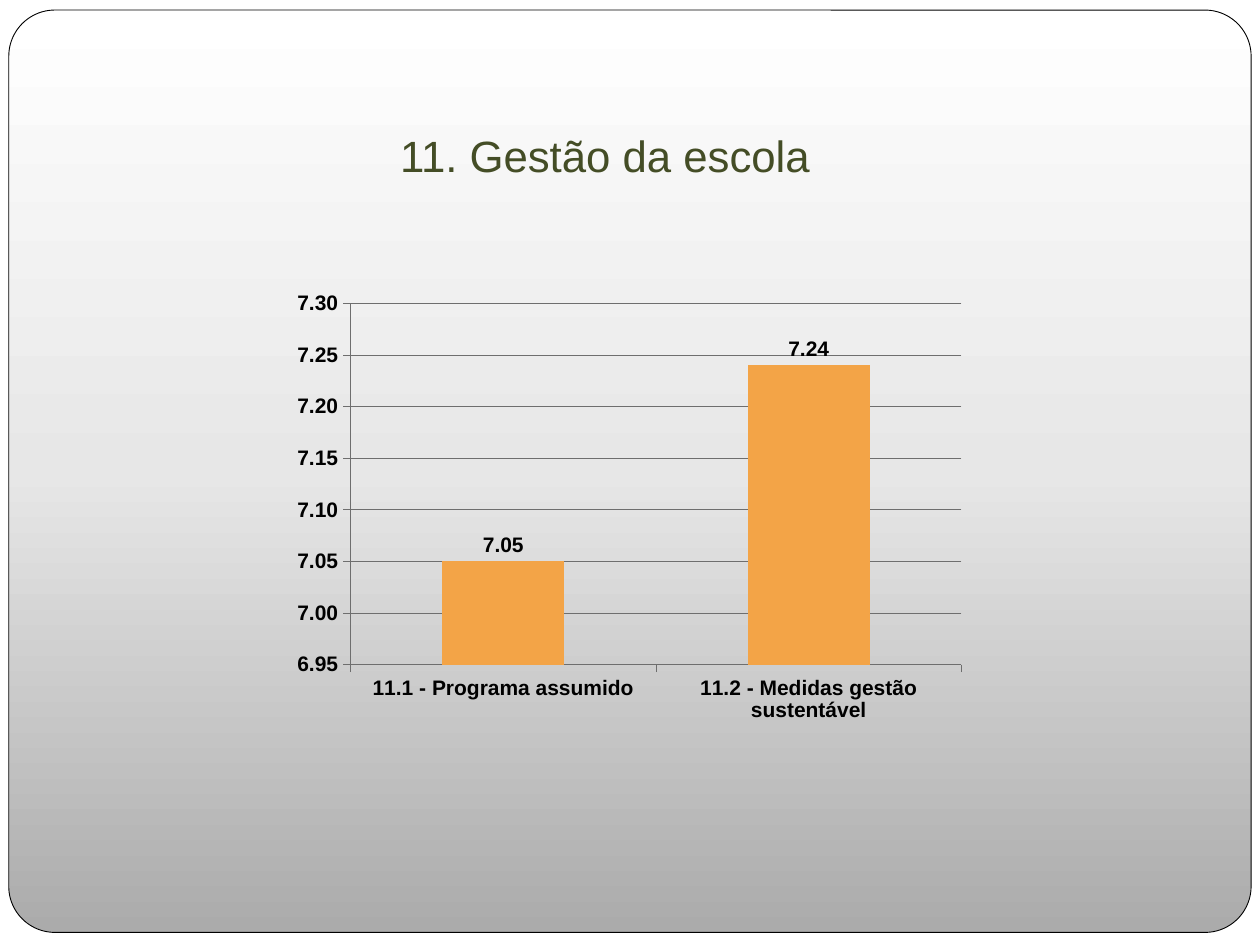
from copy import deepcopy
from dataclasses import dataclass

from pptx import Presentation
from pptx.chart.data import CategoryChartData
from pptx.dml.color import RGBColor
from pptx.enum.chart import XL_CHART_TYPE as ChartType
from pptx.enum.chart import XL_LABEL_POSITION as LabelPosition
from pptx.enum.chart import XL_TICK_MARK as TickMark
from pptx.enum.shapes import MSO_SHAPE as Shape
from pptx.enum.text import MSO_ANCHOR as Anchor
from pptx.enum.text import PP_ALIGN as Align
from pptx.util import Inches, Pt


@dataclass(frozen=True)
class Theme:
    font: str = "Arial"
    title_size: Pt = Pt(25)
    chart_size: Pt = Pt(12)
    thin_line: Pt = Pt(0.5)
    white: RGBColor = RGBColor.from_string("FFFFFF")
    black: RGBColor = RGBColor.from_string("000000")
    title: RGBColor = RGBColor.from_string("444D26")
    bar: RGBColor = RGBColor.from_string("F3A447")
    axis: RGBColor = RGBColor.from_string("6E6E6E")
    gradient: tuple = ((0, "ABABAB"), (0.5, "E7E7E7"), (1, "FFFFFF"))


THEME = Theme()


def apply_format(target, values):
    for name, value in values.items():
        setattr(target, name, value)


def fill_gradient(fill):
    """Fill upwards, from dark at the bottom to white at the top."""
    fill.gradient()
    fill.gradient_angle = 90
    # A new gradient has two stops; the theme needs a third
    first_stop = fill.gradient_stops[0]._gs
    first_stop.addnext(deepcopy(first_stop))
    for stop, (position, color) in zip(fill.gradient_stops, THEME.gradient):
        stop.position = position
        stop.color.rgb = RGBColor.from_string(color)


def style_line(line):
    line.color.rgb = THEME.axis
    line.width = THEME.thin_line


def add_backdrop(slide, width, height):
    fill_gradient(slide.background.fill)

    # White sheet behind the panel
    sheet = slide.shapes.add_shape(Shape.RECTANGLE, 0, 0, width, height)
    sheet.shadow.inherit = False
    sheet.fill.solid()
    sheet.fill.fore_color.rgb = THEME.white
    sheet.line.fill.background()

    # Rounded gradient panel
    panel = slide.shapes.add_shape(
        Shape.ROUNDED_RECTANGLE,
        Inches(0.07), Inches(0.08), Inches(9.86), Inches(7.32))
    panel.adjustments[0] = 0.05
    panel.shadow.inherit = False
    fill_gradient(panel.fill)
    panel.line.color.rgb = THEME.black
    panel.line.width = THEME.thin_line


def add_title(slide, text, box):
    frame = slide.shapes.add_textbox(*box).text_frame
    apply_format(frame, {
        "word_wrap": True,
        "vertical_anchor": Anchor.BOTTOM,
        "margin_left": Inches(0.1),
        "margin_right": Inches(0.1),
        "margin_top": Inches(0.05),
        "margin_bottom": Inches(0.1),
    })
    paragraph = frame.paragraphs[0]
    paragraph.text = text
    paragraph.alignment = Align.CENTER
    apply_format(paragraph.font, {"name": THEME.font, "size": THEME.title_size})
    paragraph.font.color.rgb = THEME.title


def add_score_chart(slide, scores, box):
    data = CategoryChartData(number_format="0.00")
    data.categories = list(scores)
    data.add_series("Series 1", list(scores.values()))
    chart = slide.shapes.add_chart(
        ChartType.COLUMN_CLUSTERED, *box, data).chart
    apply_format(chart, {"has_title": False, "has_legend": False})
    apply_format(chart.font, {
        "name": THEME.font, "size": THEME.chart_size, "bold": True})
    chart.font.color.rgb = THEME.black

    # Bars and their values
    plot = chart.plots[0]
    apply_format(plot, {
        "gap_width": 150, "vary_by_categories": False, "has_data_labels": True})
    apply_format(plot.data_labels, {
        "show_value": True,
        "number_format": "0.00",
        "number_format_is_linked": False,
        "position": LabelPosition.OUTSIDE_END,
    })
    fill = plot.series[0].format.fill
    fill.solid()
    fill.fore_color.rgb = THEME.bar

    # Axes and gridlines
    for axis in (chart.category_axis, chart.value_axis):
        axis.major_tick_mark = TickMark.OUTSIDE
        style_line(axis.format.line)
    value_axis = chart.value_axis
    apply_format(value_axis, {
        "minimum_scale": 6.95,
        "maximum_scale": 7.3,
        "major_unit": 0.05,
        "has_major_gridlines": True,
    })
    apply_format(value_axis.tick_labels, {
        "number_format": "0.00", "number_format_is_linked": False})
    style_line(value_axis.major_gridlines.format.line)


def main():
    presentation = Presentation()
    presentation.slide_width = Inches(10)
    presentation.slide_height = Inches(7.5)
    slide = presentation.slides.add_slide(presentation.slide_layouts[6])

    add_backdrop(slide, presentation.slide_width, presentation.slide_height)
    add_title(slide, "11. Gestão da escola",
              (Inches(1.61), Inches(0.29), Inches(6.38), Inches(1.25)))
    add_score_chart(
        slide,
        {"11.1 - Programa assumido": 7.05,
         "11.2 - Medidas gestão sustentável": 7.24},
        (Inches(2.25), Inches(2.25), Inches(5.49), Inches(3.55)))

    presentation.save("out.pptx")


if __name__ == "__main__":
    main()
